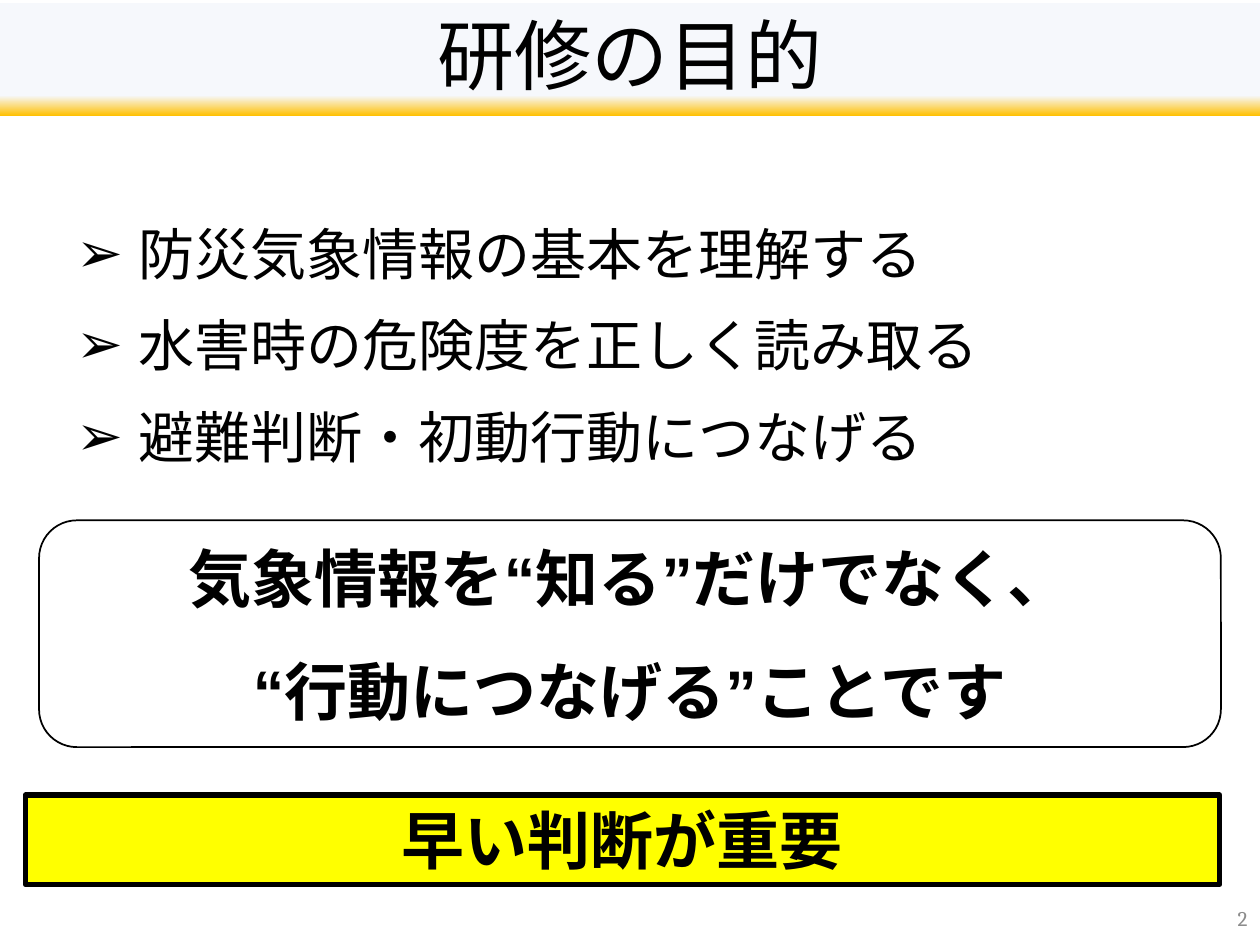
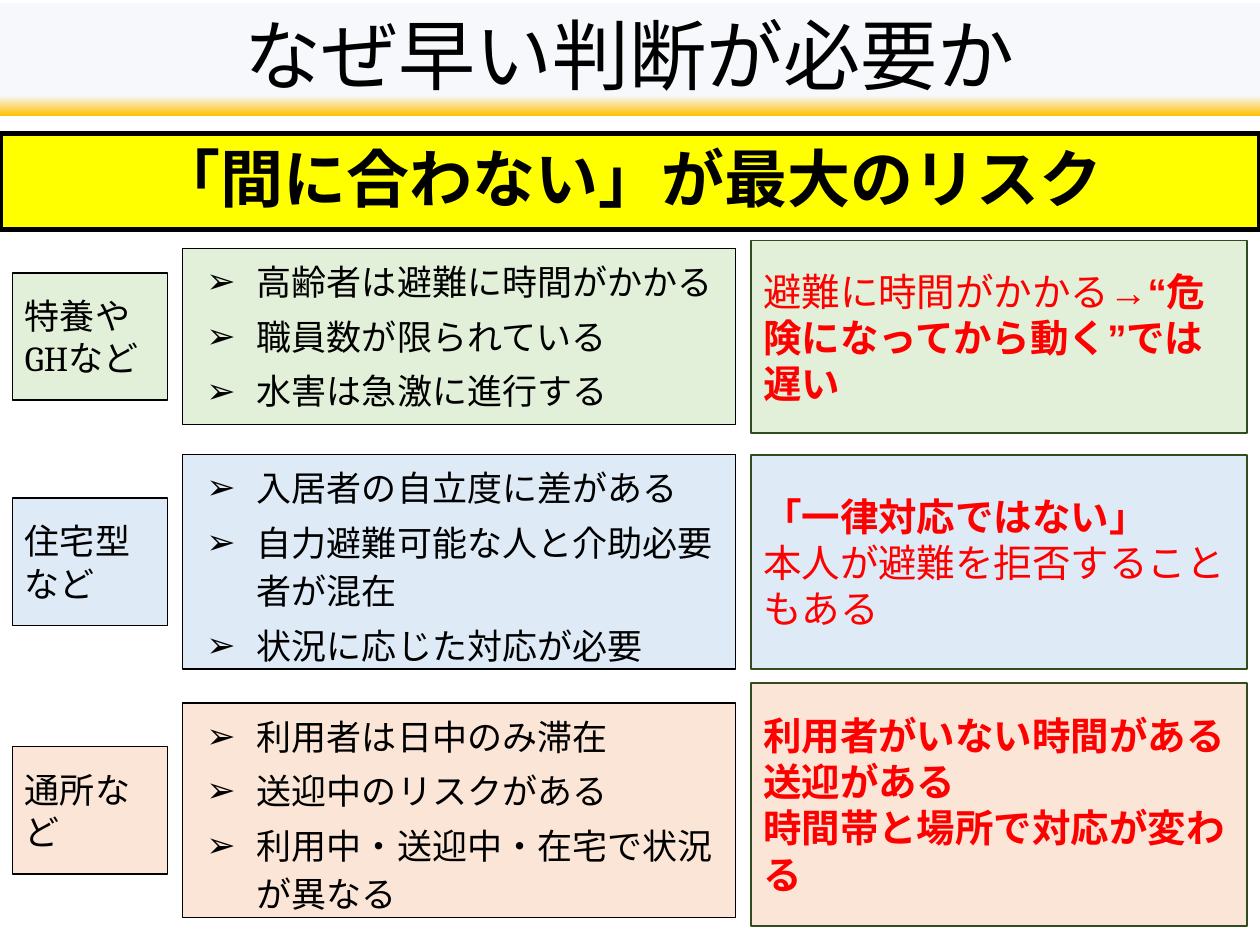
from collections import namedtuple

from lxml import etree
from pptx import Presentation
from pptx.dml.color import RGBColor
from pptx.enum.lang import MSO_LANGUAGE_ID as Language
from pptx.enum.shapes import MSO_SHAPE as Shape
from pptx.enum.text import MSO_ANCHOR as Anchor, PP_ALIGN as Align
from pptx.oxml.ns import qn
from pptx.util import Inches, Pt

BLACK, WHITE, RED, YELLOW = "000000", "FFFFFF", "FF0000", "FFFF00"
GREY, DARK_GREEN = "8C8C8C", "314C1F"
GREEN, BLUE, ORANGE = "E2F0D9", "DEEBF7", "FBE5D6"
SERIF, SANS, GOTHIC = "Cambria", "Arial", "Noto Sans CJK JP"
ASIAN = "Arial"

Facility = namedtuple(
    "Facility", "color center label traits traits_height risks risks_top risks_height")

FACILITIES = [
    Facility(GREEN, 2.67, ["特養や", "GHなど"],
             ["高齢者は避難に時間がかかる", "職員数が限られている", "水害は急激に進行する"], 1.4,
             [[("避難に時間がかかる→", False), ("“危険になってから動く”では遅い", True)]], 1.91, 1.53),
    Facility(BLUE, 4.46, ["住宅型など"],
             ["入居者の自立度に差がある", "自力避難可能な人と介助必要者が混在", "状況に応じた対応が必要"], 1.7,
             [[("「一律対応ではない」", True)], [("本人が避難を拒否することもある", False)]], 3.61, 1.7),
    Facility(ORANGE, 6.43, ["通所など"],
             ["利用者は日中のみ滞在", "送迎中のリスクがある", "利用中・送迎中・在宅で状況が異なる"], 1.7,
             [[("利用者がいない時間がある", True)], [("送迎がある", True)],
              [("時間帯と場所で対応が変わる", True)]], 5.42, 1.93),
]


def rgb(value):
    """Turn a hex string into a colour."""
    return RGBColor.from_string(value)


def add_bullet(para, margin, hanging):
    """Give a paragraph an arrow bullet with a hanging indent."""
    properties = para._p.get_or_add_pPr()
    properties.set("marL", str(Inches(margin)))
    properties.set("indent", str(-Inches(hanging)))
    etree.SubElement(properties, qn("a:buFont"), typeface=SANS)
    etree.SubElement(properties, qn("a:buChar"), char="➢")


def write(shape, lines, size=20, font=SERIF, color=BLACK, bold=False, align=Align.LEFT,
          anchor=Anchor.MIDDLE, wrap=True, spacing=None, after=None, bullet=None):
    """Fill a shape with lines, each a string or a list of (text, bold) spans."""
    frame = shape.text_frame
    frame.word_wrap = wrap
    frame.vertical_anchor = anchor
    for index, line in enumerate(lines):
        para = frame.add_paragraph() if index else frame.paragraphs[0]
        para.alignment = align
        if spacing:
            para.line_spacing = spacing
        if after is not None:
            para.space_after = Pt(after)
        if bullet:
            add_bullet(para, *bullet)
        for text, strong in [(line, bold)] if isinstance(line, str) else line:
            span = para.add_run()
            span.text = text
            span.font.size = Pt(size)
            span.font.name = font
            span.font.bold = strong
            span.font.color.rgb = rgb(color)
            span.font.language_id = Language.JAPANESE
            latin = span.font._element.find(qn("a:latin"))
            latin.addnext(latin.makeelement(qn("a:ea"), {"typeface": ASIAN}))


def place(shape, left, top, width, height):
    """Move and size a shape in inches."""
    shape.left, shape.top = Inches(left), Inches(top)
    shape.width, shape.height = Inches(width), Inches(height)


def add_box(page, area, lines, fill, line=BLACK, weight=1, kind=Shape.RECTANGLE, **style):
    """Add a filled, outlined box with text."""
    box = page.shapes.add_shape(kind, *map(Inches, area))
    box.shadow.inherit = False
    box.fill.solid()
    box.fill.fore_color.rgb = rgb(fill)
    box.line.color.rgb = rgb(line)
    box.line.width = Pt(weight)
    write(box, lines, **style)
    return box


def add_text(page, area, lines, **style):
    """Add a plain text box."""
    write(page.shapes.add_textbox(*map(Inches, area)), lines, **style)


def add_banner(page, area, text):
    """Add a yellow key-message banner."""
    add_box(page, area, [text], YELLOW, weight=3, size=36, bold=True,
            align=Align.CENTER, anchor=Anchor.TOP)


def add_page(deck, heading, number):
    """Add a slide with the gradient title band and its page number."""
    page = deck.slides.add_slide(deck.slide_layouts[5])
    title = page.shapes.title
    place(title, 0, 0.02, 10, 0.9)
    title.fill.gradient()
    title.fill.gradient_angle = 270
    for stop, position, color in zip(title.fill.gradient_stops, (0.82, 1), ("F6F8FC", "FFC000")):
        stop.position = position
        stop.color.rgb = rgb(color)
    write(title, [heading], size=44, align=Align.CENTER, spacing=0.9)
    add_text(page, (7.75, 7.09, 2.25, 0.4), [str(number)], size=12, color=GREY,
             align=Align.RIGHT)
    return page


def build_purpose(deck):
    """Build the slide on the aims of the training."""
    page = add_page(deck, "研修の目的", 2)
    aims = ["防災気象情報の基本を理解する", "水害時の危険度を正しく読み取る", "避難判断・初動行動につなげる"]
    add_text(page, (0.31, 1.47, 9.48, 2.42), aims, size=32, font=SANS, wrap=False,
             spacing=1.2, after=6, bullet=(0.69, 0.49))
    message = add_box(page, (0.31, 4.13, 9.38, 1.8),
                      ["気象情報を“知る”だけでなく、", "“行動につなげる”ことです"], WHITE,
                      kind=Shape.ROUNDED_RECTANGLE, size=36, font=GOTHIC, bold=True,
                      align=Align.CENTER)
    message.text_frame.paragraphs[1].line_spacing = 1.5
    add_banner(page, (0.2, 6.31, 9.48, 0.71), "早い判断が重要")


def add_facility(page, facility):
    """Add one row: facility label, its traits and the resulting risks."""
    label_height = 1.01
    add_box(page, (0.1, facility.center - label_height / 2, 1.23, label_height),
            facility.label, facility.color)
    height = facility.traits_height
    add_box(page, (1.45, facility.center - height / 2, 4.39, height), facility.traits,
            facility.color, weight=0.75, font=SANS, anchor=Anchor.TOP,
            spacing=1.14, after=4, bullet=(0.49, 0.4))
    add_box(page, (5.96, facility.risks_top, 3.94, facility.risks_height), facility.risks,
            facility.color, line=DARK_GREEN, size=22, color=RED)


def build_reasons(deck):
    """Build the slide on why early decisions matter."""
    page = add_page(deck, "なぜ早い判断が必要か", 3)
    add_banner(page, (0, 1.06, 10, 0.76), "「間に合わない」が最大のリスク")
    for facility in FACILITIES:
        add_facility(page, facility)


def main():
    """Build and save the deck."""
    deck = Presentation()
    deck.slide_width, deck.slide_height = Inches(10), Inches(7.5)
    build_purpose(deck)
    build_reasons(deck)
    deck.save("out.pptx")


if __name__ == "__main__":
    main()
